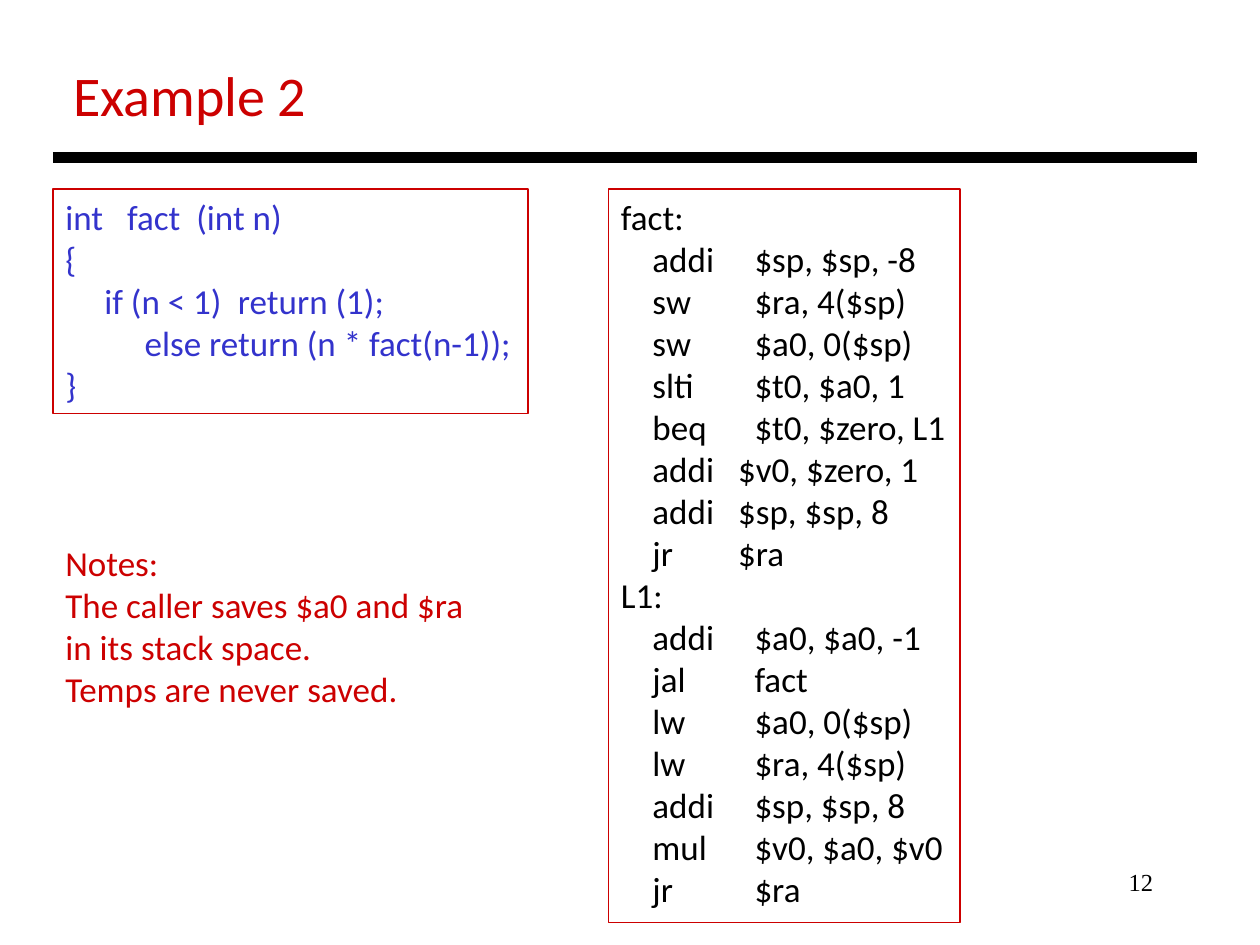
from lxml import etree
from pptx import Presentation
from pptx import util as u
from pptx.dml.color import RGBColor
from pptx.enum import shapes, text
from pptx.oxml import ns

RED = RGBColor(0xCC, 0x00, 0x00)
BLUE = RGBColor(0x33, 0x33, 0xCC)
BLACK = RGBColor(0x00, 0x00, 0x00)

LEFT, RIGHT, ASM_LEFT = 0.42, 9.5, 4.83
RULE_TOP, CODE_TOP = 1.25, 1.5
WIDE, NARROW = (0.25, 1.06), (0.25, 0.93)

C_CODE = [
    ("int\tfact\t(int n)", (0.49, 1.04)),
    ("{", ()),
    ("\tif (n < 1)\treturn (1);", (0.31, 1.37)),
    ("\telse return (n * fact(n-1));", (0.63,)),
    ("}", ()),
]
PROLOGUE = ["addi\t$sp, $sp, -8", "sw\t$ra, 4($sp)", "sw\t$a0, 0($sp)",
            "slti\t$t0, $a0, 1", "beq\t$t0, $zero, L1"]
BASE_CASE = ["addi\t$v0, $zero, 1", "addi\t$sp, $sp, 8", "jr\t$ra"]
RECURSION = ["addi\t$a0, $a0, -1", "jal\tfact", "lw\t$a0, 0($sp)",
             "lw\t$ra, 4($sp)", "addi\t$sp, $sp, 8",
             "mul\t$v0, $a0, $v0", "jr\t$ra"]
NOTES = ["Notes:", "The caller saves $a0 and $ra",
         "in its stack space.", "Temps are never saved."]


def instructions(block, stops):
    return [("\t" + line, stops) for line in block]


def plain(lines):
    return [(line, ()) for line in lines]


def set_tabs(paragraph, stops):
    if not stops:
        return
    tabs = etree.SubElement(paragraph._p.get_or_add_pPr(), ns.qn("a:tabLst"))
    for stop in stops:
        etree.SubElement(tabs, ns.qn("a:tab"), pos=str(u.Inches(stop)), algn="l")


def write(shape, lines, color, size=20, font="Calibri",
          align=text.PP_ALIGN.LEFT, wrap=False):
    frame = shape.text_frame
    frame.text = "\n".join(line for line, _ in lines)
    frame.word_wrap = wrap
    frame.auto_size = text.MSO_AUTO_SIZE.NONE
    frame.vertical_anchor = text.MSO_ANCHOR.TOP
    for paragraph, (_, stops) in zip(frame.paragraphs, lines):
        paragraph.alignment = align
        set_tabs(paragraph, stops)
        for run in paragraph.runs:
            run.font.size = u.Pt(size)
            run.font.name = font
            run.font.color.rgb = color


def add_title(slide, wording):
    title = slide.shapes.title
    title.left, title.top = u.Inches(0.48), u.Inches(0.43)
    title.width, title.height = u.Inches(2.07), u.Inches(0.64)
    write(title, plain([wording]), RED, size=32)


def add_rule(slide):
    rule = slide.shapes.add_connector(
        shapes.MSO_CONNECTOR.STRAIGHT, u.Inches(LEFT), u.Inches(RULE_TOP),
        u.Inches(RIGHT), u.Inches(RULE_TOP))
    rule.line.color.rgb = BLACK
    rule.line.width = u.Pt(6)
    etree.SubElement(rule._element.spPr, ns.qn("a:effectLst"))


def add_code(slide, left, width, height, lines, color):
    code = slide.shapes.add_shape(
        shapes.MSO_SHAPE.RECTANGLE, u.Inches(left), u.Inches(CODE_TOP),
        u.Inches(width), u.Inches(height))
    code.shadow.inherit = False
    code.fill.background()
    code.line.color.rgb = RED
    code.line.width = u.Pt(0.75)
    write(code, lines, color)


def add_text(slide, left, top, width, height, lines, color, **style):
    box = slide.shapes.add_textbox(
        u.Inches(left), u.Inches(top), u.Inches(width), u.Inches(height))
    write(box, plain(lines), color, **style)


def main():
    deck = Presentation()
    deck.slide_width, deck.slide_height = u.Inches(10), u.Inches(7.5)
    slide = deck.slides.add_slide(deck.slide_layouts[5])
    assembly = (plain(["fact:"]) + instructions(PROLOGUE, WIDE)
                + instructions(BASE_CASE, NARROW)
                + plain(["L1:"]) + instructions(RECURSION, WIDE))
    add_text(slide, 7.17, 6.83, 2.08, 0.5, ["12"], BLACK, size=14,
             font="Times New Roman", align=text.PP_ALIGN.RIGHT, wrap=True)
    add_title(slide, "Example 2")
    add_rule(slide)
    add_code(slide, LEFT, 3.77, 1.78, C_CODE, BLUE)
    add_code(slide, ASM_LEFT, 2.79, 5.82, assembly, BLACK)
    add_text(slide, LEFT, 4.25, 3.39, 1.45, NOTES, RED)
    deck.save("out.pptx")


if __name__ == "__main__":
    main()
